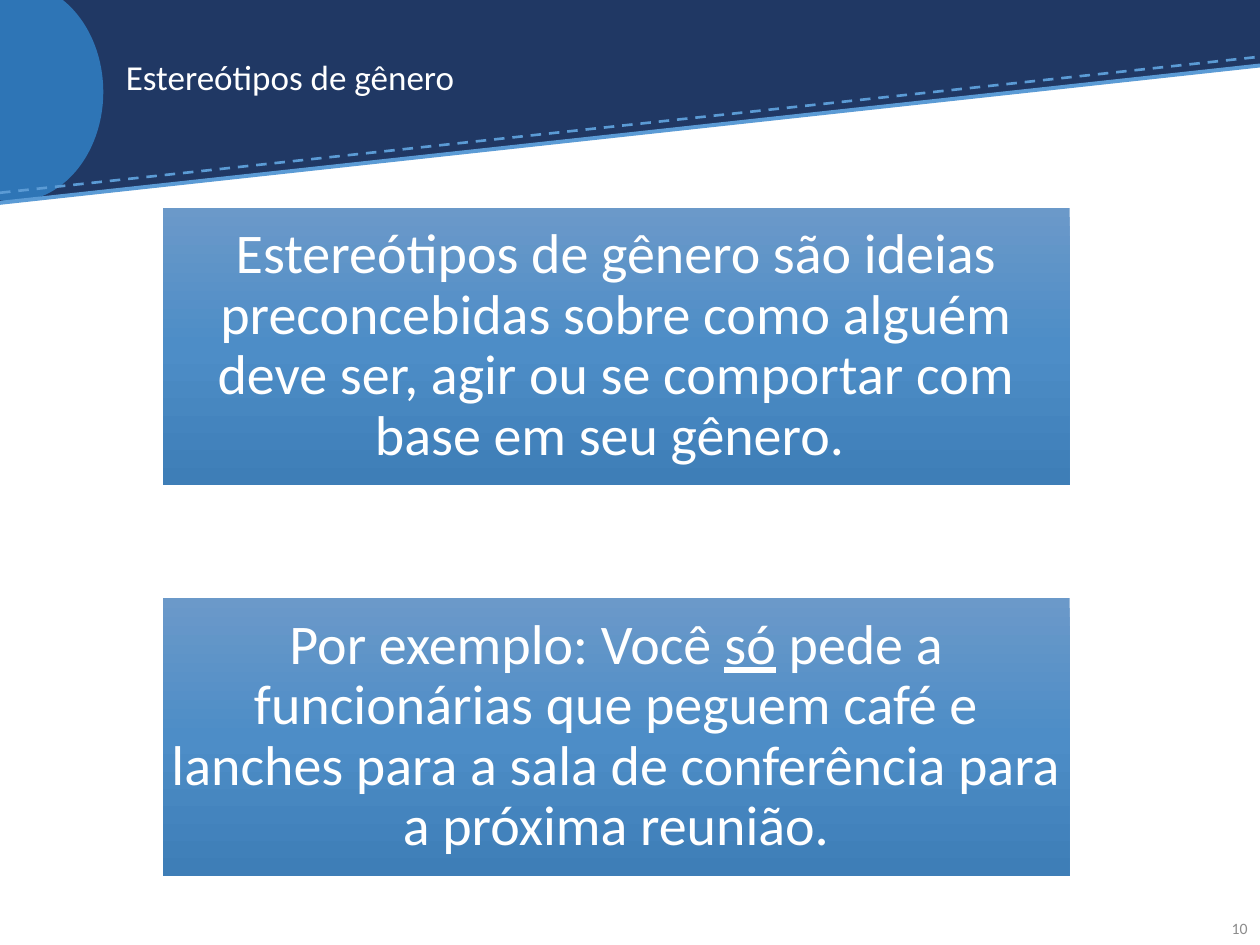
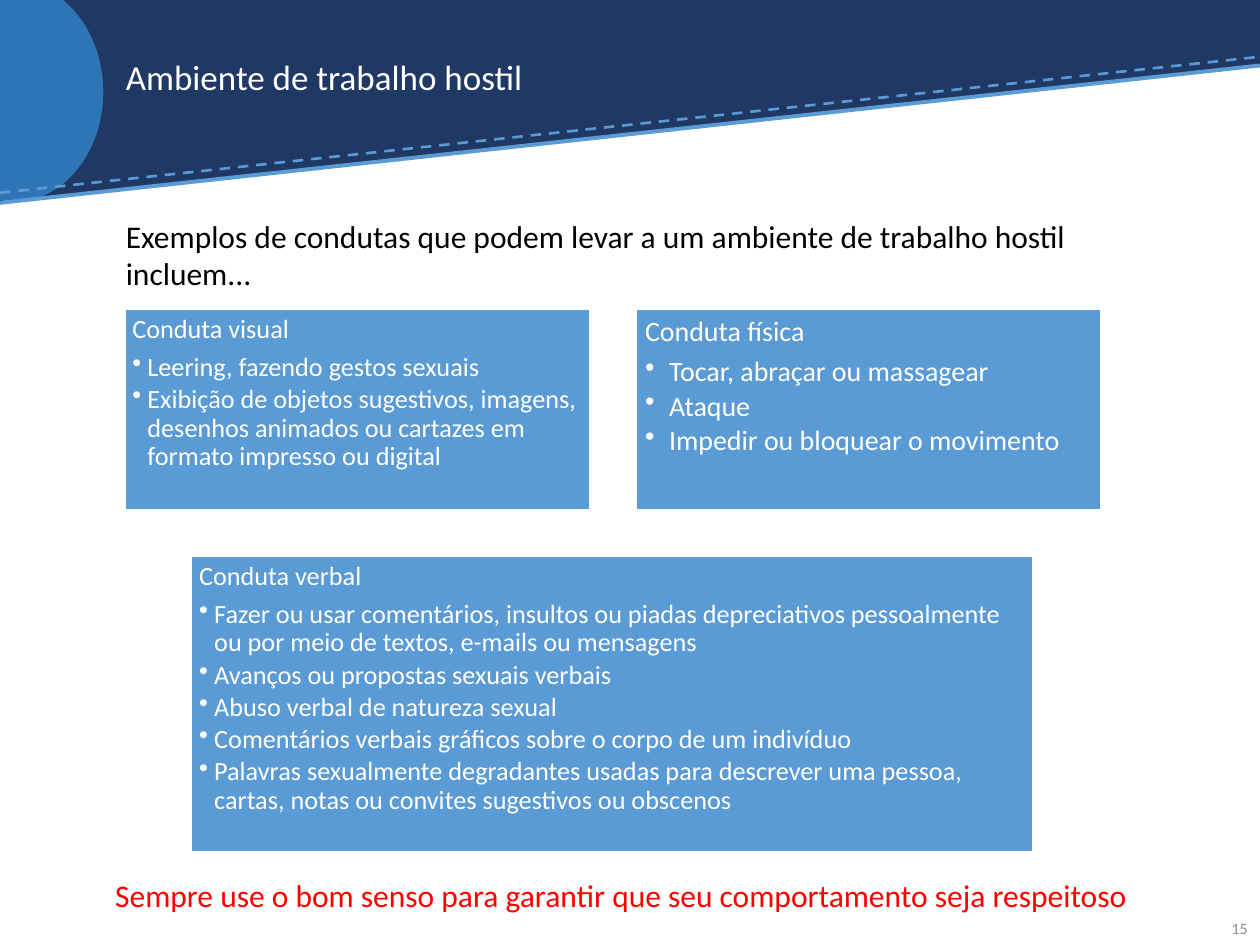
import copy
from dataclasses import dataclass

import pptx
import pptx.dml.color
import pptx.enum.dml
import pptx.enum.shapes
import pptx.enum.text
import pptx.oxml
import pptx.oxml.ns
import pptx.util
from pptx.util import Inches

ALIGN = pptx.enum.text.PP_ALIGN
ANCHOR = pptx.enum.text.MSO_ANCHOR
SHAPE = pptx.enum.shapes.MSO_SHAPE
DASH = pptx.enum.dml.MSO_LINE

FONT = "Calibri"
NAVY, BLUE, SKY = "203864", "2E75B6", "5B9BD5"
WHITE, BLACK, RED, GRAY = "FFFFFF", "000000", "FF0000", "8C8C8C"
PANEL_GRADIENT = ((0, "6B99C9"), (0.5, "4D8DC7"), (1, "3E7EB7"))


@dataclass(frozen=True)
class Box:
    left: float
    top: float
    width: float
    height: float

    def inches(self) -> tuple:
        return tuple(Inches(v) for v in (self.left, self.top, self.width, self.height))


@dataclass(frozen=True)
class TextStyle:
    size: float
    color: str = WHITE
    align: ALIGN = ALIGN.LEFT
    anchor: ANCHOR = ANCHOR.TOP
    inset: tuple = (0.1, 0.05)
    line_spacing: float = 1.0


@dataclass(frozen=True)
class Para:
    """A paragraph of (text, underlined) runs; space_after is a share of the font size."""
    runs: tuple
    space_after: float = 0
    bullet_indent: float = 0


@dataclass(frozen=True)
class ConductCard:
    box: Box
    heading: str
    items: tuple
    size: float = 15
    inset: float = 0.06
    indent: float = 0.12


TITLE = TextStyle(20, anchor=ANCHOR.MIDDLE, line_spacing=0.9)
NUMBER = TextStyle(9, GRAY, ALIGN.RIGHT, ANCHOR.MIDDLE)
INTRO = TextStyle(18, BLACK)
REMINDER = TextStyle(18, RED, ALIGN.CENTER)
PANEL = TextStyle(32, align=ALIGN.CENTER, anchor=ANCHOR.MIDDLE,
                  inset=(0.02, 0.02), line_spacing=0.9)

STEREOTYPE_PANELS = (
    (("Estereótipos de gênero são ideias preconcebidas sobre como alguém deve ser, "
      "agir ou se comportar com base em seu gênero. ", False),),
    (("Por exemplo: Você ", False), ("só", True),
     (" pede a funcionárias que peguem café e lanches para a sala de conferência "
      "para a próxima reunião.", False)),
)

CONDUCT_CARDS = (
    ConductCard(Box(0.99, 2.45, 3.69, 1.6), "Conduta visual", (
        "Leering, fazendo gestos sexuais",
        "Exibição de objetos sugestivos, imagens, desenhos animados ou cartazes em "
        "formato impresso ou digital",
    )),
    ConductCard(Box(5.05, 2.45, 3.69, 1.6), "Conduta física", (
        "Tocar, abraçar ou massagear",
        "Ataque",
        "Impedir ou bloquear o movimento",
    ), size=16, inset=0.07, indent=0.19),
    ConductCard(Box(1.52, 4.41, 6.68, 2.35), "Conduta verbal", (
        "Fazer ou usar comentários, insultos ou piadas depreciativos pessoalmente ou "
        "por meio de textos, e-mails ou mensagens",
        "Avanços ou propostas sexuais verbais",
        "Abuso verbal de natureza sexual",
        "Comentários verbais gráficos sobre o corpo de um indivíduo",
        "Palavras sexualmente degradantes usadas para descrever uma pessoa, cartas, "
        "notas ou convites sugestivos ou obscenos",
    )),
)


def rgb(hex_color: str) -> pptx.dml.color.RGBColor:
    return pptx.dml.color.RGBColor.from_string(hex_color)


def set_all(target, values: dict) -> None:
    for name, value in values.items():
        setattr(target, name, value)


def add_bullet(p, indent: float) -> None:
    pPr = p._p.get_or_add_pPr()
    pPr.set("marL", str(Inches(indent)))
    pPr.set("indent", str(-Inches(indent)))
    pPr.append(pptx.oxml.parse_xml(
        f'<a:buChar {pptx.oxml.ns.nsdecls("a")} char="•"/>'))


def write(sp, paras: list[Para], style: TextStyle) -> None:
    tf = sp.text_frame
    across, down = (Inches(v) for v in style.inset)
    set_all(tf, {"word_wrap": True, "vertical_anchor": style.anchor,
                 "margin_left": across, "margin_right": across,
                 "margin_top": down, "margin_bottom": down})
    for i, para in enumerate(paras):
        p = tf.add_paragraph() if i else tf.paragraphs[0]
        if para.bullet_indent:
            add_bullet(p, para.bullet_indent)
        set_all(p, {"alignment": style.align, "line_spacing": style.line_spacing,
                    "space_after": pptx.util.Pt(para.space_after * style.size)})
        for text, underlined in para.runs:
            r = p.add_run()
            r.text = text
            set_all(r.font, {"name": FONT, "size": pptx.util.Pt(style.size),
                             "underline": underlined})
            r.font.color.rgb = rgb(style.color)


def add_label(s, box: Box, text: str, style: TextStyle) -> None:
    write(s.shapes.add_textbox(*box.inches()), [Para(((text, False),))], style)


def add_filled(s, kind: SHAPE, box: Box, color: str):
    sp = s.shapes.add_shape(kind, *box.inches())
    sp.shadow.inherit = False
    sp.fill.solid()
    sp.fill.fore_color.rgb = rgb(color)
    sp.line.fill.background()
    return sp


def add_slope_line(s, left_y: float, right_y: float, width: float, dash: DASH) -> None:
    line = s.shapes.add_connector(
        pptx.enum.shapes.MSO_CONNECTOR.STRAIGHT,
        Inches(0), Inches(left_y), Inches(10), Inches(right_y))
    set_all(line.line, {"width": pptx.util.Pt(width), "dash_style": dash})
    line.line.color.rgb = rgb(SKY)
    line.element.spPr.append(pptx.oxml.parse_xml(
        f'<a:effectLst {pptx.oxml.ns.nsdecls("a")}/>'))


def add_base_slide(prs, title: str, number: int):
    """Add a slide with the sloped header, its title and the slide number."""
    s = prs.slides.add_slide(prs.slide_layouts[6])
    add_filled(s, SHAPE.RECTANGLE, Box(0, 0, 10, 0.52), NAVY)
    slope = add_filled(s, SHAPE.RIGHT_TRIANGLE, Box(0, 0.51, 10, 1.09), NAVY)
    slope.element.spPr.xfrm.set("flipV", "1")
    add_filled(s, SHAPE.OVAL, Box(-0.59, -0.14, 1.41, 1.74), BLUE)
    add_slope_line(s, 1.53, 0.45, 1.5, DASH.DASH)
    add_slope_line(s, 1.61, 0.52, 2.25, DASH.SOLID)
    add_label(s, Box(0.9, 0.2, 8.05, 0.86), title, TITLE)
    add_label(s, Box(9.47, 7.17, 0.53, 0.4), str(number), NUMBER)
    return s


def fill_gradient(sp, stops: tuple) -> None:
    """Fill from top to bottom with three stops."""
    sp.fill.gradient()
    sp.fill.gradient_angle = 270
    first = sp.element.spPr.find(".//" + pptx.oxml.ns.qn("a:gs"))
    first.addnext(copy.deepcopy(first))
    for stop, (position, color) in zip(sp.fill.gradient_stops, stops):
        stop.position = position
        stop.color.rgb = rgb(color)


def add_panel(s, box: Box, runs: tuple) -> None:
    sp = add_filled(s, SHAPE.RECTANGLE, box, SKY)
    fill_gradient(sp, PANEL_GRADIENT)
    write(sp, [Para(runs, 0.35)], PANEL)


def add_card(s, card: ConductCard) -> None:
    sp = add_filled(s, SHAPE.RECTANGLE, card.box, SKY)
    sp.line.color.rgb = rgb(WHITE)
    sp.line.width = pptx.util.Pt(1)
    paras = [Para(((card.heading, False),), 0.35)]
    paras += [Para(((item, False),), 0.15, card.indent) for item in card.items]
    write(sp, paras, TextStyle(card.size, inset=(card.inset, card.inset),
                               line_spacing=0.9))


def add_stereotypes_slide(prs) -> None:
    s = add_base_slide(prs, "Estereótipos de gênero", 10)
    for i, runs in enumerate(STEREOTYPE_PANELS):
        add_panel(s, Box(1.29, 1.65 + 3.1 * i, 7.2, 2.2), runs)


def add_hostile_workplace_slide(prs) -> None:
    s = add_base_slide(prs, "Ambiente de trabalho hostil", 15)
    add_label(s, Box(0.41, 6.9, 9.04, 0.7),
              "Sempre use o bom senso para garantir que seu comportamento "
              "seja respeitoso", REMINDER)
    add_label(s, Box(0.9, 1.67, 8.58, 0.7),
              "Exemplos de condutas que podem levar a um ambiente de trabalho "
              "hostil incluem...", INTRO)
    for card in CONDUCT_CARDS:
        add_card(s, card)


def main() -> None:
    prs = pptx.Presentation()
    set_all(prs, {"slide_width": Inches(10), "slide_height": Inches(7.5)})
    add_stereotypes_slide(prs)
    add_hostile_workplace_slide(prs)
    prs.save("out.pptx")


if __name__ == "__main__":
    main()
